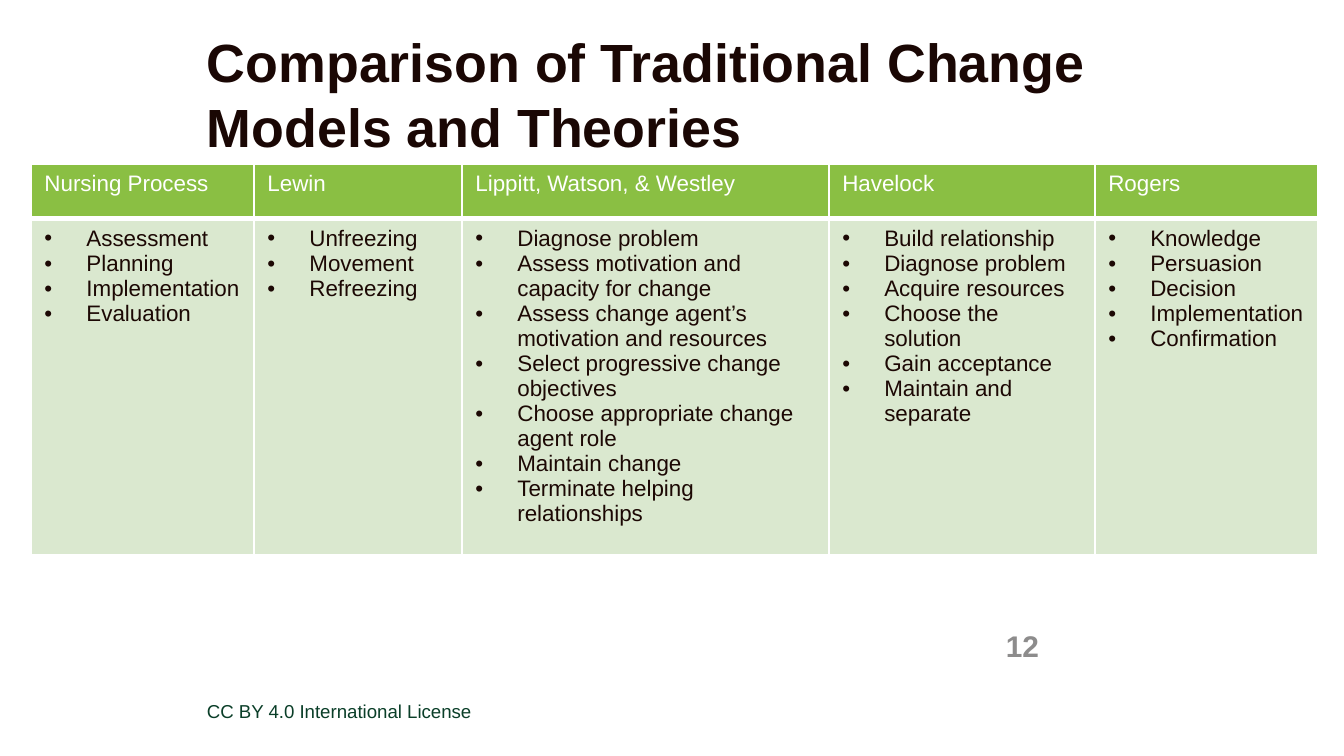
from dataclasses import dataclass

from pptx import Presentation
from pptx.dml.color import RGBColor as Rgb
from pptx.enum.text import MSO_ANCHOR as Anchor, PP_ALIGN as Align
from pptx.oxml.ns import qn
from pptx.util import Emu, Pt
from lxml.etree import SubElement

EMU_PER_PX = 914400 / 134.4
BLANK_LAYOUT = 6


@dataclass(frozen=True)
class Theme:
    """Colours and type sizes of the deck."""
    font: str = "Arial"
    title: str = "1A0704"
    body: str = "1C0804"
    licence: str = "0A3E28"
    number: str = "8D8C8C"
    white: str = "FFFFFF"
    header_fill: str = "8ABF43"
    body_fill: str = "DAE8CF"
    title_size: float = 28.8
    title_pitch: int = 35
    number_size: int = 16
    table_size: int = 12
    licence_size: int = 10
    rule: int = 1
    header_rule: int = 3


THEME = Theme()
INDENT = 42
COLUMN_WIDTHS = (223, 208, 367, 266, 223)
ROW_HEIGHTS = (55, 313)
MODELS = {
    "Nursing Process": ("Assessment", "Planning", "Implementation", "Evaluation"),
    "Lewin": ("Unfreezing", "Movement", "Refreezing"),
    "Lippitt, Watson, & Westley": (
        "Diagnose problem",
        "Assess motivation and capacity for change",
        "Assess change agent’s motivation and resources",
        "Select progressive change objectives",
        "Choose appropriate change agent role",
        "Maintain change",
        "Terminate helping relationships",
    ),
    "Havelock": (
        "Build relationship",
        "Diagnose problem",
        "Acquire resources",
        "Choose the solution",
        "Gain acceptance",
        "Maintain and separate",
    ),
    "Rogers": ("Knowledge", "Persuasion", "Decision", "Implementation", "Confirmation"),
}


def px(length):
    """Turn pixels into EMU."""
    return Emu(round(length * EMU_PER_PX))


def style(para, size, colour, bold=False):
    """Set the font of a paragraph."""
    font = para.font
    font.name, font.size, font.bold = THEME.font, Pt(size), bold
    font.color.rgb = Rgb.from_string(colour)


def add_text(page, box, text, size, colour, bold=False, top_inset=0):
    """Add a one-paragraph text box and return its frame."""
    frame = page.shapes.add_textbox(*map(px, box)).text_frame
    frame.word_wrap = True
    frame.margin_left = frame.margin_right = frame.margin_bottom = 0
    frame.margin_top = px(top_inset)
    para = frame.paragraphs[0]
    para.text = text
    style(para, size, colour, bold)
    return frame


def add_title(page, box):
    """Place the slide title."""
    frame = add_text(page, box, "Comparison of Traditional Change Models and Theories",
                     THEME.title_size, THEME.title, bold=True)
    frame.paragraphs[0].line_spacing = Pt(THEME.title_pitch)


def add_licence(page, box):
    """Place the licence line."""
    add_text(page, box, "CC BY 4.0 International License",
             THEME.licence_size, THEME.licence)


def add_page_number(page, box):
    """Place the right-aligned page number."""
    frame = add_text(page, box, "12", THEME.number_size, THEME.number,
                     bold=True, top_inset=7)
    frame.vertical_anchor = Anchor.MIDDLE
    frame.paragraphs[0].alignment = Align.RIGHT


def add_bullet(para):
    """Give a paragraph a bullet with a hanging indent."""
    properties = para._p.get_or_add_pPr()
    properties.set("marL", str(px(INDENT)))
    properties.set("indent", str(-px(INDENT)))
    SubElement(properties, qn("a:buFont"), typeface=THEME.font)
    SubElement(properties, qn("a:buChar"), char="•")


def dress_cell(cell, fill, bottom_rule):
    """Draw the borders of a cell and fill it."""
    properties = cell._tc.get_or_add_tcPr()
    rules = {"L": THEME.rule, "R": THEME.rule, "T": THEME.rule, "B": bottom_rule}
    for side, width in rules.items():
        line = SubElement(properties, qn(f"a:ln{side}"), w=str(Pt(width)))
        SubElement(SubElement(line, qn("a:solidFill")), qn("a:srgbClr"), val=THEME.white)
    cell.fill.solid()
    cell.fill.fore_color.rgb = Rgb.from_string(fill)


def fill_cell(cell, lines, colour, bulleted):
    """Write lines of text into a cell, one paragraph each."""
    frame = cell.text_frame
    for index, line in enumerate(lines):
        para = frame.add_paragraph() if index else frame.paragraphs[0]
        para.text = line
        if bulleted:
            add_bullet(para)
        style(para, THEME.table_size, colour)


def add_comparison(page, box):
    """Place the table that compares the change models."""
    table = page.shapes.add_table(len(ROW_HEIGHTS), len(MODELS), *map(px, box)).table
    for column, width in zip(table.columns, COLUMN_WIDTHS):
        column.width = px(width)
    for row, height in zip(table.rows, ROW_HEIGHTS):
        row.height = px(height)
    for index, (model, steps) in enumerate(MODELS.items()):
        header, body = table.cell(0, index), table.cell(1, index)
        fill_cell(header, [model], THEME.white, bulleted=False)
        dress_cell(header, THEME.header_fill, THEME.header_rule)
        fill_cell(body, steps, THEME.body, bulleted=True)
        dress_cell(body, THEME.body_fill, THEME.rule)


def main():
    """Build the deck and save it."""
    deck = Presentation()
    deck.slide_width, deck.slide_height = px(1344), px(756)
    page = deck.slides.add_slide(deck.slide_layouts[BLANK_LAYOUT])
    add_title(page, (207, 28, 1070, 54))
    add_licence(page, (207, 700, 805, 20))
    add_page_number(page, (956, 622, 83, 40))
    add_comparison(page, (31, 164, sum(COLUMN_WIDTHS), sum(ROW_HEIGHTS)))
    deck.save("out.pptx")


if __name__ == "__main__":
    main()
